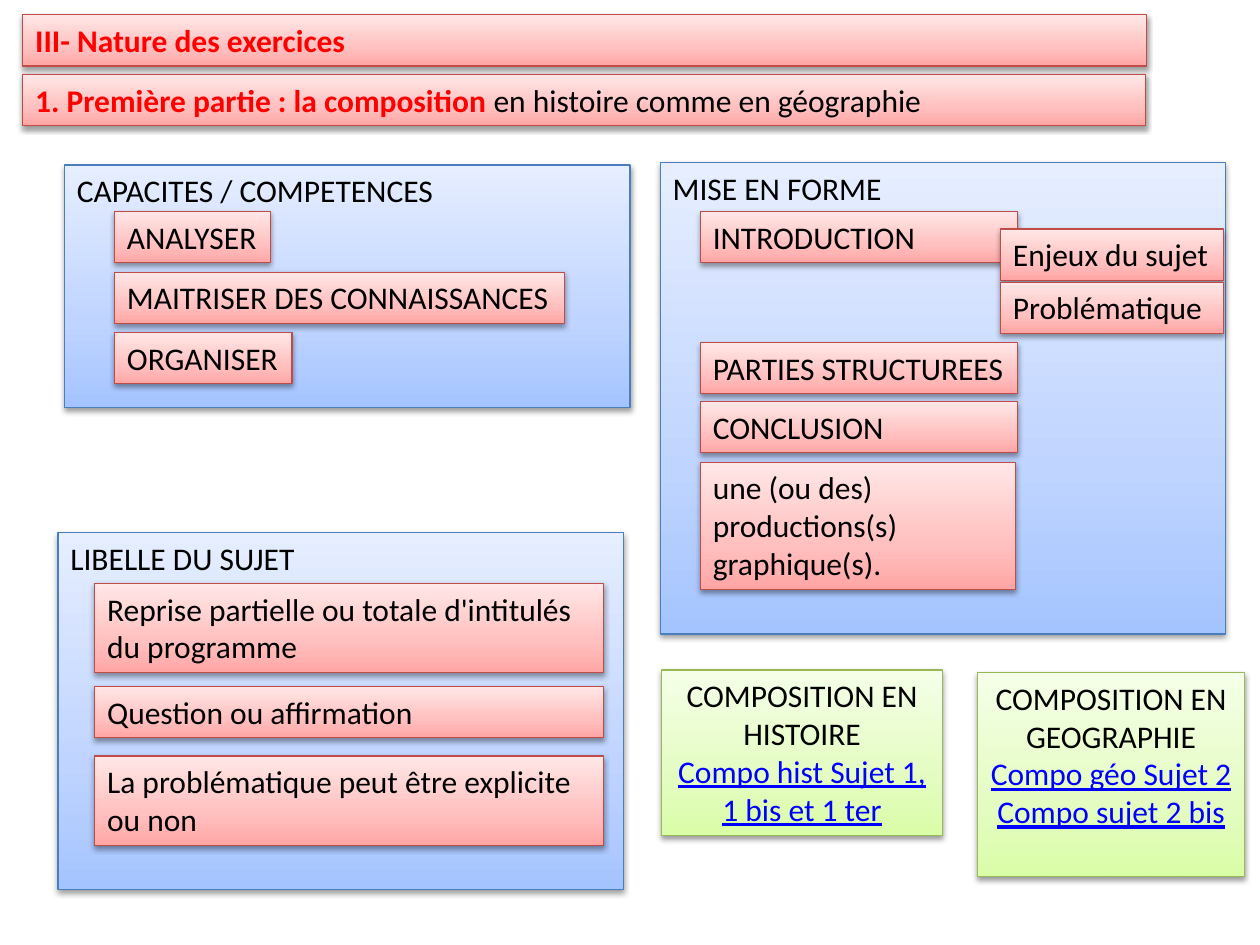
from copy import deepcopy

from lxml import etree
from pptx import Presentation
from pptx import util as u
from pptx.dml.color import RGBColor
from pptx.enum import shapes, text
from pptx.oxml.ns import qn

BLUE = ("4B7EBC", ("A4C4FF", "BFD4FF", "E6EEFF"))
RED = ("BF4C48", ("FFA6A5", "FFC0BF", "FFE7E7"))
GREEN = ("98B955", ("DAFDA7", "E4FCC2", "F5FFE7"))
STOPS = (0, 0.35, 1)
BLACK, TITLE, LINK = "000000", "FF0000", "0000FF"
PANEL_WIDTH = 11.4


def color(value):
    """Turn a hex string into a colour."""
    return RGBColor.from_string(value)


def height_for(lines):
    """Return the height in cm of a label with this many lines."""
    return 0.26 + 0.77 * lines


def paint_gradient(box, hues):
    """Fill a box with three colours that rise from its lower edge."""
    box.fill.gradient()
    box.fill.gradient_angle = 90
    stop_list = box._element.spPr.find(".//" + qn("a:gsLst"))
    stop_list.insert(1, deepcopy(stop_list[0]))
    for stop, position, hue in zip(box.fill.gradient_stops, STOPS, hues):
        stop.position = position
        stop.color.rgb = color(hue)


def add_shadow(box):
    """Give a box a soft shadow below it."""
    box.shadow.inherit = False
    effects = box._element.spPr.find(qn("a:effectLst"))
    shadow = etree.SubElement(effects, qn("a:outerShdw"), blurRad="40000",
                              dist="20000", dir="5400000", rotWithShape="0")
    hue = etree.SubElement(shadow, qn("a:srgbClr"), val=BLACK)
    etree.SubElement(hue, qn("a:alpha"), val="38000")


def style_font(font, hue=BLACK, bold=False, underline=False):
    """Set the common typeface and the given emphasis."""
    font.name, font.size = "Calibri", u.Pt(18)
    font.color.rgb = color(hue)
    font.bold, font.underline = bold, underline


def add_box(page, theme, left, top, width, height, wrap=True):
    """Add an empty themed rectangle, measured in cm."""
    edge, hues = theme
    box = page.shapes.add_shape(shapes.MSO_SHAPE.RECTANGLE,
                                *map(u.Cm, (left, top, width, height)))
    paint_gradient(box, hues)
    box.line.color.rgb = color(edge)
    box.line.width = u.Pt(0.75)
    add_shadow(box)
    box.text_frame.word_wrap = wrap
    box.text_frame.vertical_anchor = text.MSO_ANCHOR.TOP
    box.text_frame.paragraphs[0].alignment = text.PP_ALIGN.LEFT
    return box


def write(box, words, **style):
    """Write one plain paragraph in a box."""
    para = box.text_frame.paragraphs[0]
    para.text = words
    style_font(para.font, **style)


def add_panel(page, heading, left, top, height):
    """Add a large blue panel with its heading."""
    write(add_box(page, BLUE, left, top, PANEL_WIDTH, height), heading)


def add_label(page, words, left, top, width, lines=1, wrap=True, **style):
    """Add a red label as high as its lines of text."""
    box = add_box(page, RED, left, top, width, height_for(lines), wrap)
    write(box, words, **style)


def add_subtitle(page):
    """Add the second title bar, with bold and regular words."""
    box = add_box(page, RED, 0.46, 1.5, 22.64, height_for(1))
    para = box.text_frame.paragraphs[0]
    for words, hue, bold in (("1. Première partie : la composition ", TITLE, True),
                             ("en histoire comme en géographie", BLACK, False)):
        span = para.add_run()
        span.text = words
        style_font(span.font, hue, bold)


def add_examples(page, heading, links, left, top, width, height):
    """Add a green box with a heading and underlined entries."""
    frame = add_box(page, GREEN, left, top, width, height).text_frame
    frame.text = "\n".join((heading, *links))
    for number, para in enumerate(frame.paragraphs):
        para.alignment = text.PP_ALIGN.CENTER
        if number:
            style_font(para.font, LINK, underline=True)
            style_font(para.runs[0].font, LINK, underline=True)
        else:
            style_font(para.font)


def add_skills(page):
    """Add the panel of skills."""
    add_panel(page, "CAPACITES / COMPETENCES", 1.3, 3.33, 4.88)
    skills = (("ANALYSER", 3.15), ("MAITRISER DES CONNAISSANCES", 9.07),
              ("ORGANISER", 3.58))
    for row, (words, width) in enumerate(skills):
        add_label(page, words, 2.31, 4.27 + 1.22 * row, width, wrap=False)


def add_layout(page):
    """Add the panel on how the answer is set out."""
    add_panel(page, "MISE EN FORME", 13.31, 3.28, 9.5)
    add_label(page, "INTRODUCTION", 14.12, 4.27, 6.4)
    add_label(page, "PARTIES STRUCTUREES", 14.12, 6.91, 6.4, wrap=False)
    add_label(page, "CONCLUSION", 14.12, 8.1, 6.4)
    add_label(page, "Enjeux du sujet", 20.17, 4.62, 4.5, wrap=False)
    add_label(page, "Problématique", 20.17, 5.69, 4.5)
    add_label(page, "une (ou des) productions(s) graphique(s).",
              14.12, 9.32, 6.35, lines=3)


def add_wording(page):
    """Add the panel on the wording of the subject."""
    add_panel(page, "LIBELLE DU SUJET", 1.17, 10.74, 7.19)
    for words, top, lines in (
            ("Reprise partielle ou totale d'intitulés du programme", 11.76, 2),
            ("Question ou affirmation", 13.84, 1),
            ("La problématique peut être explicite ou non", 15.24, 2)):
        add_label(page, words, 1.91, top, 10.26, lines)


def main():
    """Build the slide and save it."""
    deck = Presentation()
    deck.slide_width, deck.slide_height = u.Cm(25.4), u.Cm(19.05)
    page = deck.slides.add_slide(deck.slide_layouts[6])
    add_label(page, "III- Nature des exercices", 0.46, 0.3, 22.66,
              hue=TITLE, bold=True)
    add_subtitle(page)
    add_skills(page)
    add_layout(page)
    add_wording(page)
    add_examples(page, "COMPOSITION EN HISTOIRE",
                 ["Compo hist Sujet 1, 1 bis et 1 ter"],
                 13.34, 13.51, 5.66, 3.33)
    add_examples(page, "COMPOSITION EN GEOGRAPHIE",
                 ["Compo géo Sujet 2", "Compo sujet 2 bis"],
                 19.71, 13.56, 5.38, 4.11)
    deck.save("out.pptx")


if __name__ == "__main__":
    main()
